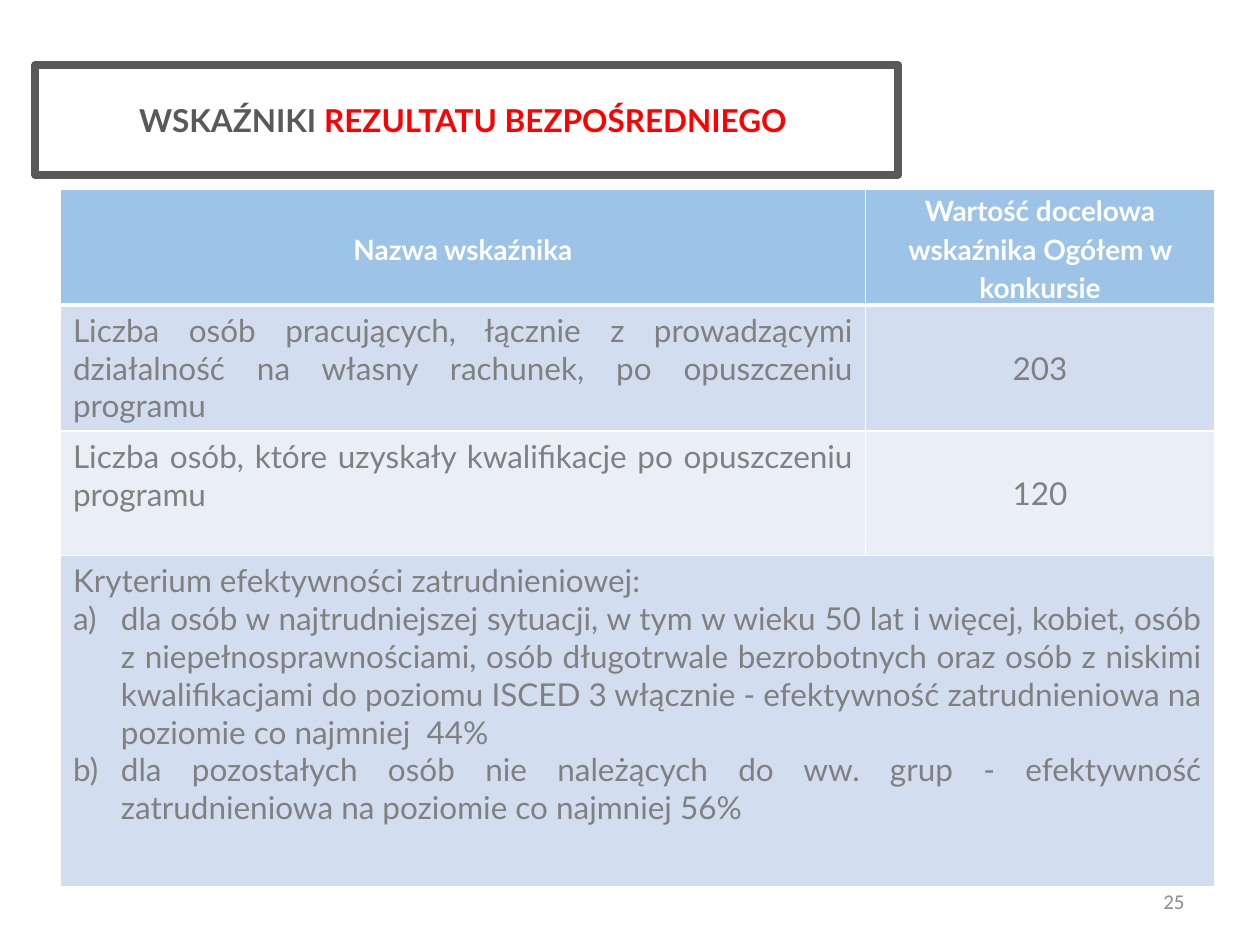
from lxml.etree import SubElement as Sub
from pptx import Presentation
from pptx.dml.color import RGBColor
from pptx.enum.shapes import MSO_SHAPE as Shape
from pptx.enum.text import MSO_ANCHOR as Anchor, PP_ALIGN as Align
from pptx.oxml.ns import qn
from pptx.util import Inches, Pt

WIDE, HIGH = 10, 7.5
GREY = "808080"
COLS = [6.39, 2.77]
ROWS = [0.89, 1, 0.99, 2.63]
FILLS = ["9DC3E6", "D2DEEF", "EAEFF7", "D2DEEF"]
HEADS = ["Nazwa wskaźnika", "Wartość docelowa wskaźnika Ogółem w konkursie"]
GOALS = [
    ("Liczba osób pracujących, łącznie z prowadzącymi działalność na własny "
     "rachunek, po opuszczeniu programu", "203"),
    ("Liczba osób, które uzyskały kwalifikacje po opuszczeniu programu ", "120"),
]
RULE = "Kryterium efektywności zatrudnieniowej:"
ITEMS = [
    "dla osób w najtrudniejszej sytuacji, w tym w wieku 50 lat i więcej, kobiet, "
    "osób z niepełnosprawnościami, osób długotrwale bezrobotnych oraz osób "
    "z niskimi kwalifikacjami do poziomu ISCED 3 włącznie - efektywność "
    "zatrudnieniowa na poziomie co najmniej  44%",
    "dla pozostałych osób nie należących do ww. grup - efektywność "
    "zatrudnieniowa na poziomie co najmniej 56%",
]


def paint(code):
    return RGBColor.from_string(code)


def place(left, top, wide, high):
    return (Inches(left * WIDE), Inches(top * HIGH),
            Inches(wide * WIDE), Inches(high * HIGH))


def write(para, parts, size, align, bold=False, face="Lato"):
    para.alignment = align
    font = para.font
    font.size, font.bold, font.name = Pt(size), bold, face
    for text, code in parts:
        run = para.add_run()
        run.text = text
        if len(parts) > 1:
            run.font.color.rgb = paint(code)
        else:
            font.color.rgb = paint(code)


def letter(para):
    props = para._p.get_or_add_pPr()
    props.set("marL", str(Inches(0.38)))
    props.set("indent", str(-Inches(0.38)))
    Sub(props, qn("a:buAutoNum"), type="alphaLcParenR")


def edge(cell, base):
    props = cell._tc.get_or_add_tcPr()
    for side, width in zip("LRTB", (1, 1, 1, base)):
        line = Sub(props, qn("a:ln" + side), w=str(Pt(width)))
        fill = Sub(line, qn("a:solidFill"))
        Sub(fill, qn("a:srgbClr"), val="FFFFFF")


def title(slide):
    box = slide.shapes.add_shape(Shape.RECTANGLE, *place(0.028, 0.069, 0.685, 0.116))
    box.shadow.inherit = False
    box.fill.background()
    box.line.color.rgb = paint("595959")
    box.line.width = Pt(4.5)
    frame = box.text_frame
    frame.vertical_anchor = Anchor.MIDDLE
    write(frame.paragraphs[0],
          [("WSKAŹNIKI ", "595959"), ("REZULTATU BEZPOŚREDNIEGO ", "FF0000")],
          18, Align.CENTER, True)


def head(cell, text):
    cell.margin_left = cell.margin_right = Inches(0.07)
    cell.margin_top = cell.margin_bottom = 0
    cell.vertical_anchor = Anchor.MIDDLE
    para = cell.text_frame.paragraphs[0]
    para.line_spacing = 1.15
    write(para, [(text, "FFFFFF")], 16, Align.CENTER, True)


def body(cell, text, align=Align.JUSTIFY):
    write(cell.text_frame.paragraphs[0], [(text, GREY)], 18, align)


def grid(slide):
    area = place(0.048, 0.2, sum(COLS) / WIDE, sum(ROWS) / HIGH)
    table = slide.shapes.add_table(len(ROWS), len(COLS), *area).table
    for col, wide in zip(table.columns, COLS):
        col.width = Inches(wide)
    for i, (row, high) in enumerate(zip(table.rows, ROWS)):
        row.height = Inches(high)
        for cell in row.cells:
            edge(cell, 1 if i else 3)
            cell.fill.solid()
            cell.fill.fore_color.rgb = paint(FILLS[i])
    for j, text in enumerate(HEADS):
        head(table.cell(0, j), text)
    for i, (name, goal) in enumerate(GOALS, 1):
        body(table.cell(i, 0), name)
        body(table.cell(i, 1), goal, Align.CENTER)
        table.cell(i, 1).vertical_anchor = Anchor.MIDDLE
    last = table.cell(3, 0)
    last.merge(table.cell(3, 1))
    body(last, RULE)
    for text in ITEMS:
        para = last.text_frame.add_paragraph()
        letter(para)
        write(para, [(text, GREY)], 18, Align.JUSTIFY)


def number(slide):
    frame = slide.shapes.add_textbox(*place(0.717, 0.927, 0.233, 0.053)).text_frame
    frame.word_wrap = True
    frame.vertical_anchor = Anchor.MIDDLE
    write(frame.paragraphs[0], [("25", "8C8C8C")], 12, Align.RIGHT, face="Calibri")


def main():
    deck = Presentation()
    deck.slide_width, deck.slide_height = Inches(WIDE), Inches(HIGH)
    slide = deck.slides.add_slide(deck.slide_layouts[6])
    number(slide)
    title(slide)
    grid(slide)
    deck.save("out.pptx")


if __name__ == "__main__":
    main()
